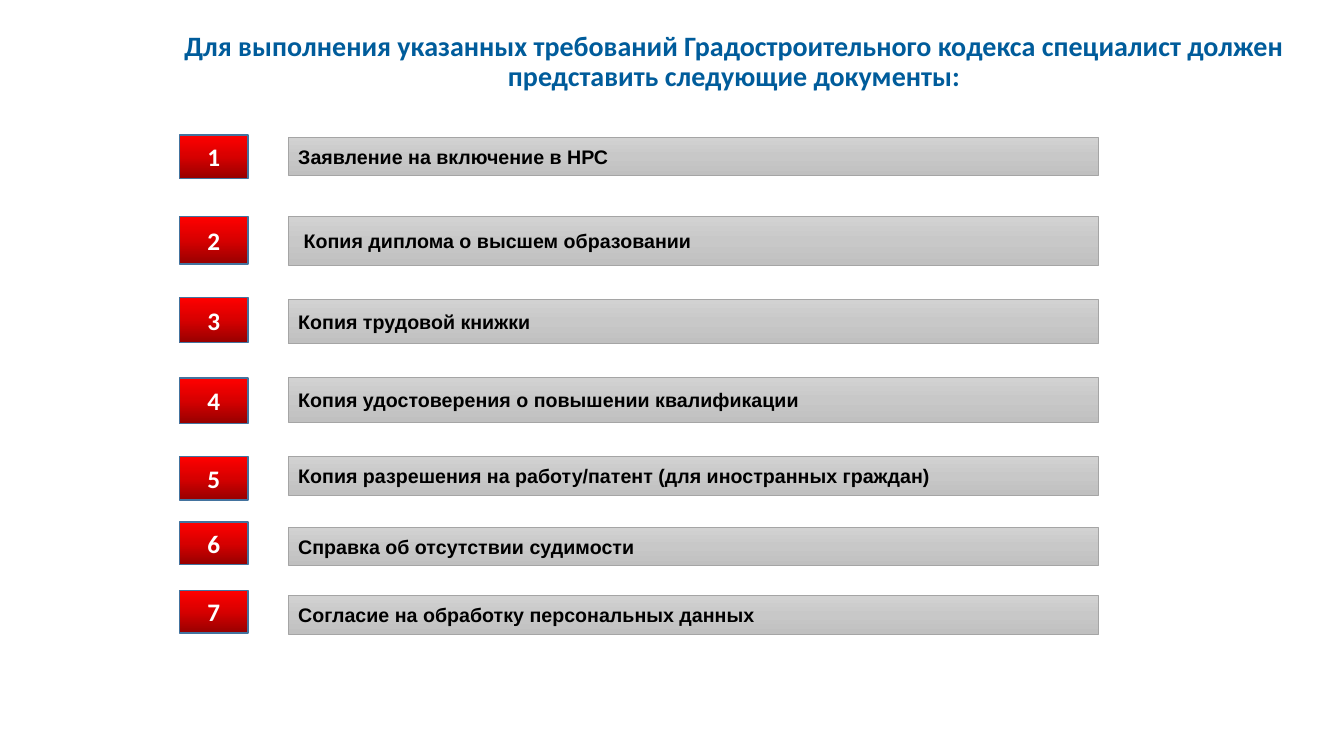
from lxml import etree
from pptx import Presentation
from pptx import util as u
from pptx.dml.color import RGBColor
from pptx.enum import shapes, text
from pptx.oxml.ns import qn

# The slide is a grid of square cells; every box is left, top, width, height in cells.
CELL = u.Inches(0.01)
COLS, ROWS = 1333, 750
TITLE_BOX = (142, 14, 1172, 96)
LIST_BOX = (178, 134, 911, 495)
BADGE_COLS, GAP_COLS = 68, 40

BLUE = RGBColor(0x00, 0x5C, 0x9B)
WHITE = RGBColor(0xFF, 0xFF, 0xFF)
BLACK = RGBColor(0x00, 0x00, 0x00)
BADGE_LINE = RGBColor(0x43, 0x73, 0x9E)
BAR_LINE = RGBColor(0xA5, 0xA5, 0xA5)
REDS = [RGBColor(0xFF, 0, 0), RGBColor(0xD7, 0, 0), RGBColor(0x97, 0, 0)]
GREYS = [RGBColor(v, v, v) for v in (0xD2, 0xC8, 0xC0)]

TITLE = ("Для выполнения указанных требований Градостроительного кодекса "
         "специалист должен представить следующие документы:")
# Wording, then top and height of the badge, then top and height of the bar,
# with tops counted from the top of the list.
DOCUMENTS = [
    ("Заявление на включение в НРС", 0, 43, 2, 38),
    (" Копия диплома о высшем образовании", 81, 47, 81, 48),
    ("Копия трудовой книжки", 161, 45, 163, 44),
    ("Копия удостоверения о повышении квалификации", 241, 45, 240, 45),
    ("Копия разрешения на работу/патент (для иностранных граждан)", 319, 43, 319, 38),
    ("Справка об отсутствии судимости", 384, 42, 389, 38),
    ("Согласие на обработку персональных данных", 452, 42, 457, 38),
]


def cells(*counts):
    return [n * CELL for n in counts]


def write(sp, words, size, color, font="Calibri", align=text.PP_ALIGN.CENTER, spacing=None):
    tf = sp.text_frame
    tf.word_wrap = True
    tf.vertical_anchor = text.MSO_ANCHOR.MIDDLE
    p = tf.paragraphs[0]
    p.alignment = align
    p.line_spacing = spacing
    r = p.add_run()
    r.text = words
    r.font.name = font
    r.font.size = u.Pt(size)
    r.font.bold = True
    r.font.color.rgb = color


def shade(sp, colors):
    """Fill a shape with evenly spaced colours from top to bottom."""
    sp.fill.gradient()
    sp.fill.gradient_angle = 270
    stops = sp._element.spPr.find(".//" + qn("a:gsLst"))
    for gs in list(stops):
        stops.remove(gs)
    for i, color in enumerate(colors):
        pos = 100000 * i // (len(colors) - 1)
        gs = etree.SubElement(stops, qn("a:gs"), pos=str(pos))
        etree.SubElement(gs, qn("a:srgbClr"), val=str(color))


def add_panel(s, box, colors, line, line_width):
    sp = s.shapes.add_shape(shapes.MSO_SHAPE.RECTANGLE, *cells(*box))
    sp.shadow.inherit = False
    shade(sp, colors)
    sp.line.color.rgb = line
    sp.line.width = u.Pt(line_width)
    return sp


def add_title(s, box):
    sp = s.shapes.add_textbox(*cells(*box))
    write(sp, TITLE, 20, BLUE, spacing=0.9)


def add_documents(s, box):
    """Place numbered badges at the left of the box and bars in the rest of it."""
    left, top, width, _ = box
    offset = BADGE_COLS + GAP_COLS
    for number, (words, badge_top, badge_rows, bar_top, bar_rows) in enumerate(DOCUMENTS, 1):
        badge = add_panel(s, (left, top + badge_top, BADGE_COLS, badge_rows),
                          REDS, BADGE_LINE, 1)
        write(badge, str(number), 18, WHITE)
        bar = add_panel(s, (left + offset, top + bar_top, width - offset, bar_rows),
                        GREYS, BAR_LINE, 0.5)
        write(bar, words, 14, BLACK, font="Arial", align=text.PP_ALIGN.LEFT)


def main():
    prs = Presentation()
    prs.slide_width, prs.slide_height = cells(COLS, ROWS)
    s = prs.slides.add_slide(prs.slide_layouts[6])
    add_title(s, TITLE_BOX)
    add_documents(s, LIST_BOX)
    prs.save("out.pptx")


if __name__ == "__main__":
    main()
